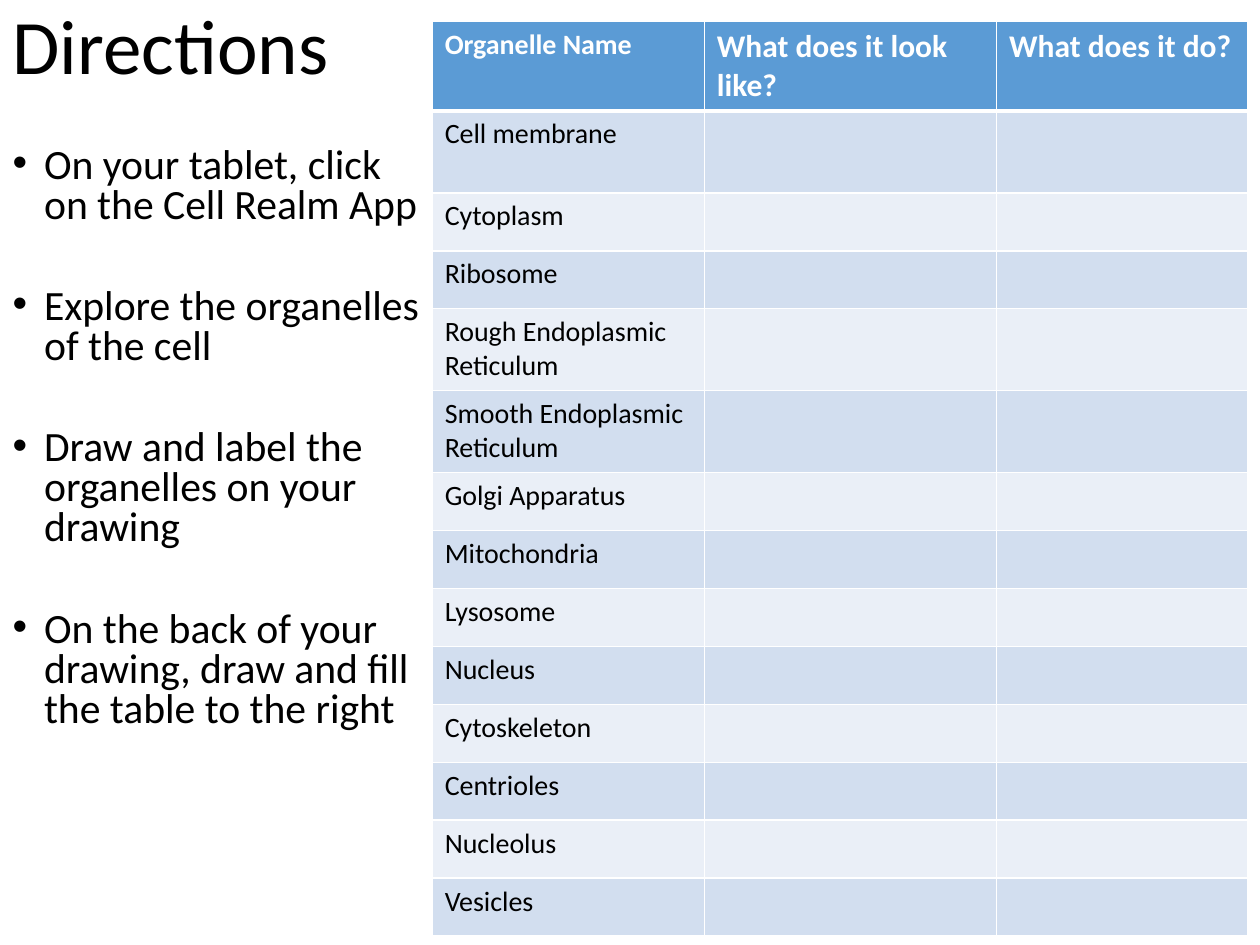
from dataclasses import dataclass

from lxml import etree
from pptx import Presentation
from pptx.dml.color import RGBColor
from pptx.enum.text import MSO_ANCHOR, MSO_AUTO_SIZE, PP_ALIGN
from pptx.oxml.ns import qn
from pptx.util import Inches, Pt

LEFT = PP_ALIGN.LEFT
MIDDLE = MSO_ANCHOR.MIDDLE
TOP = MSO_ANCHOR.TOP
FIXED = MSO_AUTO_SIZE.NONE


@dataclass(frozen=True)
class Theme:
    face: str = "Calibri"
    ink: str = "000000"
    white: str = "FFFFFF"
    head: str = "5B9BD5"
    bands: tuple = ("D2DEEF", "EAEFF7")
    title: float = 44
    body: float = 23.8
    label: float = 16
    query: float = 18


THEME = Theme()

STEPS = (
    "On your tablet, click on the Cell Realm App",
    "Explore the organelles of the cell",
    "Draw and label the organelles on your drawing",
    "On the back of your drawing, draw and fill the table to the right",
)
HEADS = ("Organelle Name", "What does it look like?", "What does it do?")
PARTS = (
    "Cell membrane", "Cytoplasm", "Ribosome",
    "Rough Endoplasmic Reticulum", "Smooth Endoplasmic Reticulum",
    "Golgi Apparatus", "Mitochondria", "Lysosome", "Nucleus",
    "Cytoskeleton", "Centrioles", "Nucleolus", "Vesicles",
)
TALL = {"Cell membrane", "Rough Endoplasmic Reticulum", "Smooth Endoplasmic Reticulum"}
WIDTHS = (2.16, 2.32, 1.99)


def style(font, size, color, bold=False):
    font.name = THEME.face
    font.size = Pt(size)
    font.bold = bold
    font.color.rgb = RGBColor.from_string(color)


def place(shape, box):
    shape.left, shape.top, shape.width, shape.height = map(Inches, box)


def add_title(slide, box):
    shape = slide.shapes.title
    place(shape, box)
    frame = shape.text_frame
    frame.text = "Directions"
    frame.auto_size = FIXED
    frame.vertical_anchor = MIDDLE
    para = frame.paragraphs[0]
    para.alignment = LEFT
    para.line_spacing = 0.9
    style(para.runs[0].font, THEME.title, THEME.ink)


def add_steps(slide, box):
    shape = slide.placeholders[1]
    place(shape, box)
    frame = shape.text_frame
    frame.text = "\n".join(STEPS)
    frame.auto_size = FIXED
    frame.vertical_anchor = TOP
    for i, para in enumerate(frame.paragraphs):
        props = para._p.get_or_add_pPr()
        props.set("marL", str(Inches(0.25)))
        props.set("indent", str(-Inches(0.25)))
        etree.SubElement(props, qn("a:buChar")).set("char", "•")
        para.line_spacing = 0.8
        para.space_before = Pt(35 if i else 0)
        style(para.runs[0].font, THEME.body, THEME.ink)


def add_edge(cell, side, width):
    line = etree.SubElement(cell._tc.get_or_add_tcPr(), qn(f"a:ln{side}"))
    line.set("w", str(Pt(width)))
    fill = etree.SubElement(line, qn("a:solidFill"))
    etree.SubElement(fill, qn("a:srgbClr")).set("val", THEME.white)


def fill_cell(cell, row, col, text):
    for side in "LRTB":
        thick = (row, side) in ((0, "B"), (1, "T"))
        add_edge(cell, side, 3 if thick else 1)
    head = row == 0
    shade = THEME.head if head else THEME.bands[(row - 1) % 2]
    cell.fill.solid()
    cell.fill.fore_color.rgb = RGBColor.from_string(shade)
    if text:
        cell.text_frame.text = text
        size = THEME.query if head and col else THEME.label
        color = THEME.white if head else THEME.ink
        style(cell.text_frame.paragraphs[0].runs[0].font, size, color, head)


def add_grid(slide, box):
    rows = [HEADS] + [(name, "", "") for name in PARTS]
    table = slide.shapes.add_table(len(rows), len(HEADS), *map(Inches, box)).table
    for col, width in zip(table.columns, WIDTHS):
        col.width = Inches(width)
    for r, texts in enumerate(rows):
        high = 0.65 if texts[0] in TALL else 0.46
        table.rows[r].height = Inches(high if r else 0.7)
        for c, text in enumerate(texts):
            fill_cell(table.cell(r, c), r, c, text)


def main():
    deck = Presentation()
    deck.slide_width, deck.slide_height = Inches(10), Inches(7.5)
    slide = deck.slides.add_slide(deck.slide_layouts[1])
    add_title(slide, (0, -0.33, 8.62, 1.45))
    add_steps(slide, (0, 1.12, 3.45, 4.76))
    add_grid(slide, (3.43, 0.17, 6.47, 7.22))
    deck.save("out.pptx")


if __name__ == "__main__":
    main()
